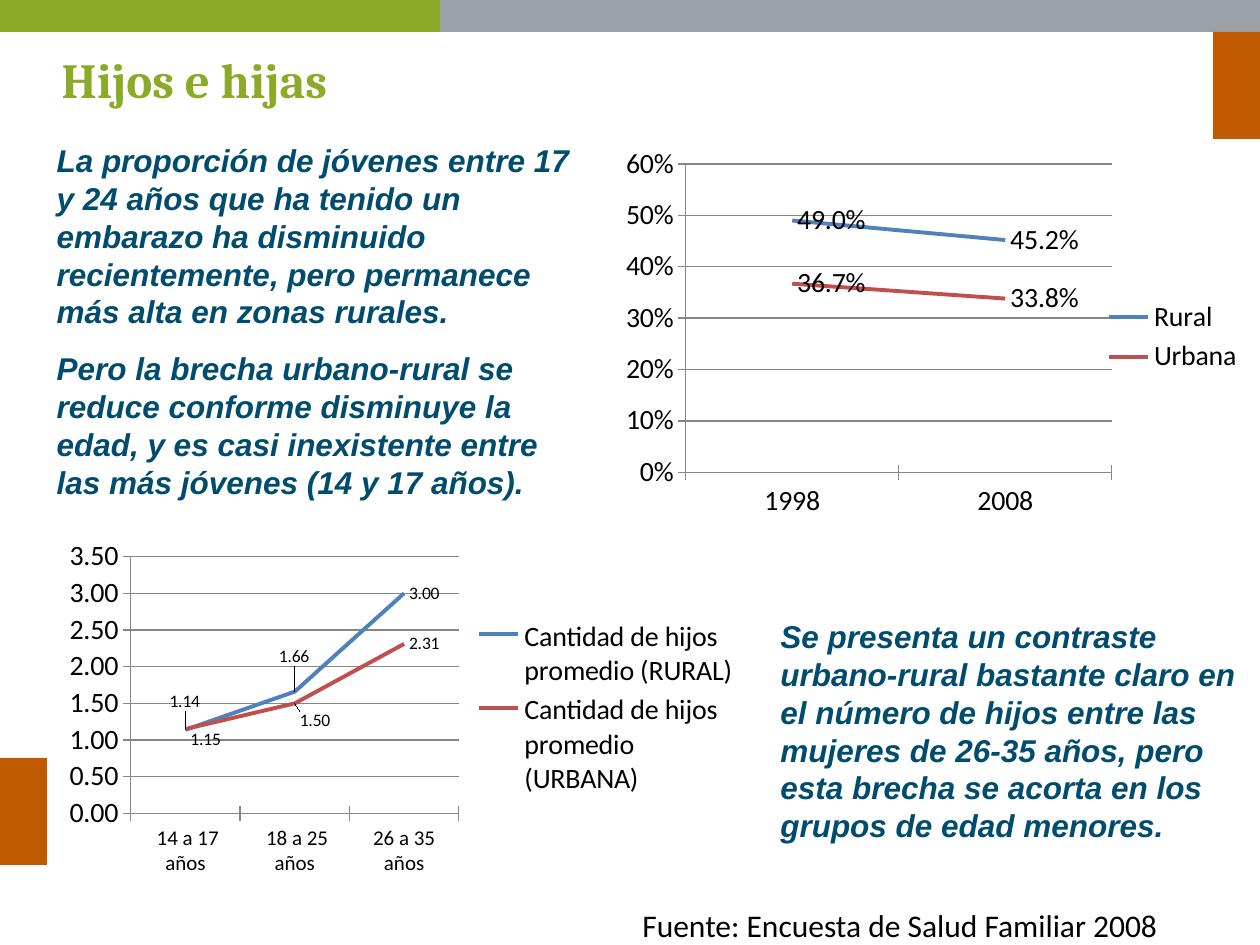
from lxml.etree import SubElement
from pptx import Presentation
from pptx.chart.data import CategoryChartData
from pptx.dml.color import RGBColor
from pptx.enum.chart import XL_CHART_TYPE, XL_LABEL_POSITION, XL_LEGEND_POSITION, XL_TICK_MARK
from pptx.enum.shapes import MSO_SHAPE
from pptx.enum.text import MSO_ANCHOR, MSO_AUTO_SIZE, PP_ALIGN
from pptx.oxml.ns import qn
from pptx.util import Emu, Pt

PX = 914400 / 126
GREEN = RGBColor(0x8B, 0xAA, 0x27)
GRAY = RGBColor(0x9C, 0xA1, 0xA9)
ORANGE = RGBColor(0xBF, 0x5A, 0x00)
NAVY = RGBColor(0x00, 0x4C, 0x6F)
BLACK = RGBColor(0x00, 0x00, 0x00)
BLUE = RGBColor(0x4F, 0x81, 0xBD)
RED = RGBColor(0xC0, 0x50, 0x4D)
GRID = RGBColor(0x86, 0x86, 0x86)


def px(*values):
    return [Emu(round(v * PX)) for v in values]


def place(sp, box):
    sp.left, sp.top, sp.width, sp.height = px(*box)


def write(sp, texts, font, size, color, bold=False, italic=False):
    tf = sp.text_frame
    tf.word_wrap = True
    tf.auto_size = MSO_AUTO_SIZE.NONE
    tf.vertical_anchor = MSO_ANCHOR.TOP
    tf.text = "\n".join(texts)
    for p in tf.paragraphs:
        p.alignment = PP_ALIGN.LEFT
        for r in p.runs:
            f = r.font
            f.name, f.size, f.bold, f.italic = font, Pt(size), bold, italic
            f.color.rgb = color
    return tf.paragraphs


def add_title(s, box, text):
    sp = s.shapes.title
    place(sp, box)
    p = write(sp, [text], "Cambria", 28, GREEN, bold=True)[0]
    p.line_spacing = 0.9
    p.space_before = Pt(5.6)


def add_body(s, box, texts):
    sp = s.placeholders[1]
    place(sp, box)
    for p in write(sp, texts, "Arial", 18, NAVY, True, True):
        p.space_before, p.space_after = Pt(3.6), Pt(7.2)
        pPr = p._p.get_or_add_pPr()
        pPr.set("marL", "0")
        pPr.set("indent", "0")
        SubElement(pPr, qn("a:buNone"))


def add_text(s, box, text, *style):
    write(s.shapes.add_textbox(*px(*box)), [text], *style)


def add_frame(s, box):
    x, y, w, h = box
    bar_h, split, tab_w, tab_h = 32, 440, 47, 107
    for left, top, width, height, color in (
        (split, 0, w - split, bar_h, GRAY),
        (w - tab_w, bar_h, tab_w, tab_h, ORANGE),
        (0, 0, split, bar_h, GREEN),
        (0, 758, tab_w, tab_h, ORANGE),
    ):
        sp = s.shapes.add_shape(MSO_SHAPE.RECTANGLE, *px(x + left, y + top, width, height))
        sp.shadow.inherit = False
        sp.fill.solid()
        sp.fill.fore_color.rgb = color
        sp.line.fill.background()


def set_layout(layout, **values):
    manual = SubElement(layout, qn("c:manualLayout"))
    for tag, value in values.items():
        SubElement(manual, qn(f"c:{tag}")).set("val", str(value))


def set_plot_layout(chart, x, y, w, h):
    area = chart._chartSpace.find(".//" + qn("c:plotArea"))
    layout = area.find(qn("c:layout"))
    if layout is None:
        layout = SubElement(area, qn("c:layout"))
        area.insert(0, layout)
    set_layout(layout, layoutTarget="inner", xMode="edge", yMode="edge", x=x, y=y, w=w, h=h)


def shift_labels(ser, offsets):
    for i, (x, y) in enumerate(offsets):
        ser.points[i].data_label.position = XL_LABEL_POSITION.RIGHT
    for label, (x, y) in zip(ser._element.iter(qn("c:dLbl")), offsets):
        layout = SubElement(label, qn("c:layout"))
        label.insert(1, layout)
        set_layout(layout, x=x, y=y)


def add_line_chart(s, box, cats, series, formats, sizes, plot):
    data_format, axis_format, label_format = formats
    label_size, cat_size, size = sizes
    data = CategoryChartData(number_format=data_format)
    data.categories = cats
    for name, values in series:
        data.add_series(name, values)
    chart = s.shapes.add_chart(XL_CHART_TYPE.LINE, *px(*box), data).chart
    chart.has_title = False
    chart.font.name, chart.font.size = "Calibri", Pt(label_size)
    chart.font.color.rgb = BLACK
    chart.has_legend = True
    chart.legend.position = XL_LEGEND_POSITION.RIGHT
    chart.legend.include_in_layout = False
    chart.legend.font.size = Pt(size)
    for axis, axis_size in ((chart.category_axis, cat_size), (chart.value_axis, size)):
        axis.major_tick_mark = XL_TICK_MARK.CROSS
        axis.tick_labels.font.size = Pt(axis_size)
        axis.format.line.color.rgb = GRID
    value_axis = chart.value_axis
    value_axis.major_gridlines.format.line.color.rgb = GRID
    value_axis.tick_labels.number_format = axis_format
    value_axis.tick_labels.number_format_is_linked = False
    chart.plots[0].vary_by_categories = False
    for ser, color in zip(chart.plots[0].series, (BLUE, RED)):
        ser.smooth = False
        ser.format.line.color.rgb = color
        ser.format.line.width = Pt(2.25)
        labels = ser.data_labels
        labels.show_value = True
        labels.number_format = label_format
        labels.number_format_is_linked = False
        labels.position = XL_LABEL_POSITION.RIGHT
    set_plot_layout(chart, *plot)
    return chart


def add_pregnancy_chart(s, box):
    add_line_chart(
        s, box, ["1998", "2008"],
        [("Rural", (0.49, 0.452)), ("Urbana", (0.367, 0.338))],
        ("0.0%", "0%", "0.0%"), (16, 16, 16), (0.09, 0.04, 0.68, 0.82))


def add_children_chart(s, box):
    chart = add_line_chart(
        s, box, [" 14 a 17 años", " 18 a 25 años", "26 a 35 años"],
        [("Cantidad de hijos promedio (RURAL)", (1.14, 1.66, 3)),
         ("Cantidad de hijos promedio (URBANA)", (1.15, 1.5, 2.31))],
        ("0.00", "0.00", "0.00"), (10, 12, 16), (0.11, 0.07, 0.47, 0.73))
    rural, urban = chart.plots[0].series
    shift_labels(rural, [(-0.03, -0.08), (-0.03, -0.1)])
    shift_labels(urban, [(0, 0.03), (0, 0.05)])


def main():
    prs = Presentation()
    prs.slide_width, prs.slide_height = px(1260, 945)
    s = prs.slides.add_slide(prs.slide_layouts[1])
    add_title(s, (49, 50, 1173, 815), "Hijos e hijas")
    add_body(s, (44, 135, 556, 490), [
        "La proporción de jóvenes entre 17 y 24 años que ha tenido un embarazo "
        "ha disminuido recientemente, pero permanece más alta en zonas rurales.",
        "Pero la brecha urbano-rural se reduce conforme disminuye la edad, "
        "y es casi inexistente entre las más jóvenes (14 y 17 años).",
    ])
    add_frame(s, (0, 0, 1260, 945))
    add_pregnancy_chart(s, (626, 147, 630, 378))
    add_text(s, (768, 611, 492, 242),
             "Se presenta un contraste urbano-rural bastante claro en el número de hijos "
             "entre las mujeres de 26-35 años, pero esta brecha se acorta en los grupos "
             "de edad menores.", "Arial", 18, NAVY, True, True)
    add_children_chart(s, (54, 532, 698, 352))
    add_text(s, (630, 900, 630, 50), "Fuente: Encuesta de Salud Familiar 2008",
             "Calibri", 18, BLACK)
    prs.save("out.pptx")


if __name__ == "__main__":
    main()
